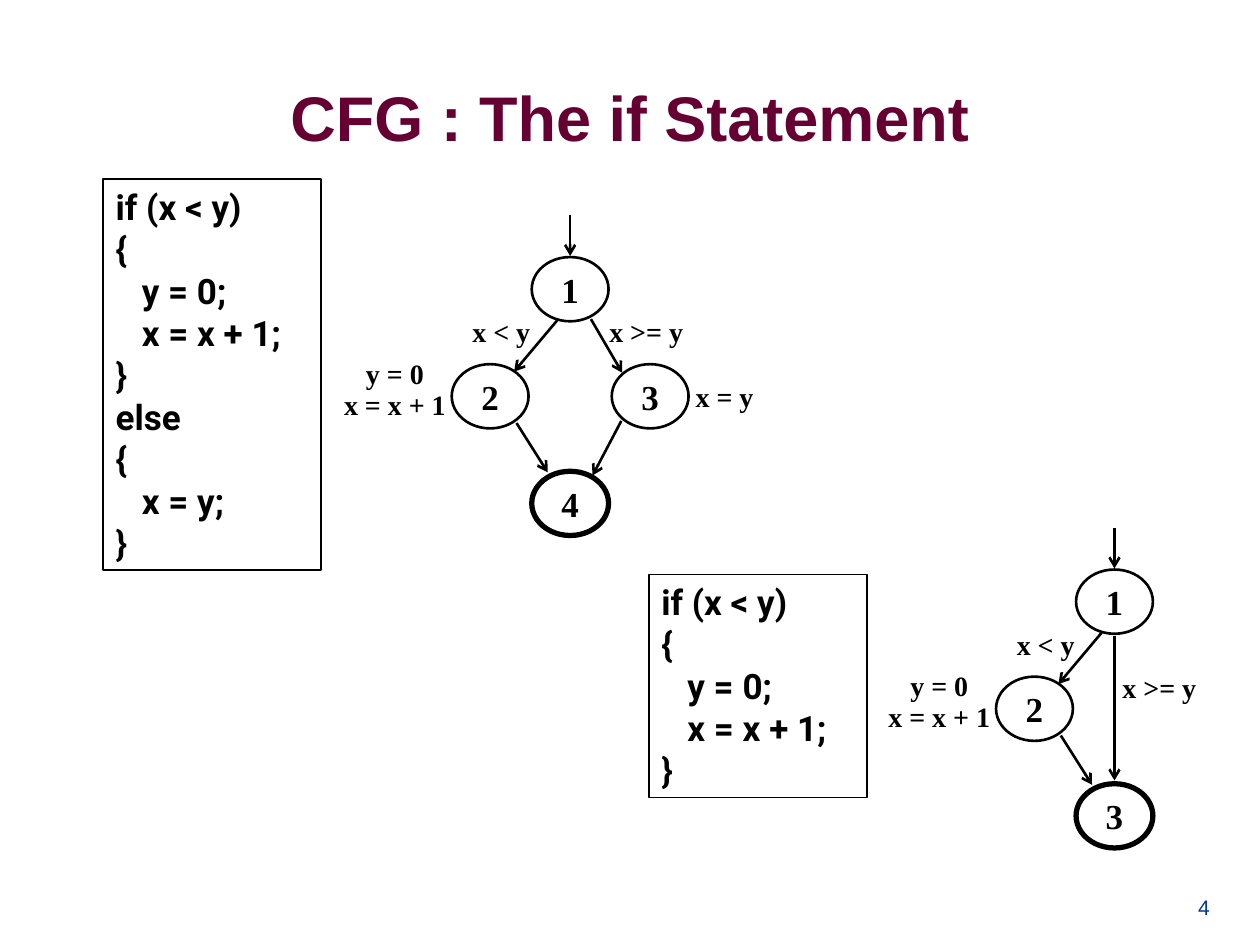
from pptx import Presentation
from pptx.dml.color import RGBColor
from pptx.enum.shapes import MSO_CONNECTOR, MSO_SHAPE
from pptx.enum.text import MSO_ANCHOR, PP_ALIGN
from pptx.oxml.ns import qn
from pptx.util import Inches, Pt
from lxml.etree import SubElement

BLACK = RGBColor(0x00, 0x00, 0x00)
PLUM = RGBColor(0x66, 0x00, 0x33)
NAVY = RGBColor(0x00, 0x33, 0x99)
SERIF, SANS, CODE = "Times New Roman", "Arial", "Roboto"

WIDE, HIGH = 10, 7.5
COL, ROW = 0.635, 0.85
NODE = (0.61, 0.51)
LABEL = (0.82, 0.37)
BLOCK = (1.03, 0.5)
CODE_W, LINE_H, PAD = 1.73, 0.334, 0.1

THEN = ["if (x < y)", "{", "   y = 0;", "   x = x + 1;", "}"]
ELSE = ["else", "{", "   x = y;", "}"]
CODES = [((0.82, 1.42), THEN + ELSE), ((5.15, 4.56), THEN)]

NODES = [("1", 0, 0), ("2", -1, 1)]
EDGES = [
    ((0, -0.69), (0, -0.31)),
    ((-0.16, 0.29), (-0.7, 0.77)),
    ((-0.67, 1.25), (-0.28, 1.71)),
]
LABELS = [(["x < y"], -0.86, 0.4), (["y = 0", "x = x + 1"], -2.19, 1)]

GRAPHS = [
    {
        "top": (4.525, 2.295),
        "nodes": NODES + [("3", 1, 1)],
        "last": ("4", 0, 2),
        "edges": EDGES + [
            ((0.26, 0.28), (0.65, 0.78)),
            ((0.64, 1.23), (0.28, 1.74)),
        ],
        "labels": LABELS + [(["x >= y"], 0.95, 0.4), (["x = y"], 1.93, 1)],
    },
    {
        "top": (8.845, 4.775),
        "nodes": NODES,
        "last": ("3", 0, 2),
        "edges": EDGES + [((0, 0.32), (0, 1.67))],
        "labels": LABELS + [(["x >= y"], 0.56, 0.8)],
    },
]


def write(shape, lines, font=SERIF, size=16, color=BLACK, bold=True,
          align=PP_ALIGN.CENTER, anchor=MSO_ANCHOR.TOP, space=None, gap=0):
    frame = shape.text_frame
    frame.word_wrap = True
    frame.vertical_anchor = anchor
    for i, line in enumerate(lines):
        para = frame.add_paragraph() if i else frame.paragraphs[0]
        para.alignment = align
        para.line_spacing = space
        if i:
            para.space_before = Pt(gap)
        run = para.add_run()
        run.text = line
        run.font.name, run.font.size = font, Pt(size)
        run.font.bold, run.font.color.rgb = bold, color


def box(shapes, x, y, w, h):
    return shapes.add_textbox(Inches(x), Inches(y), Inches(w), Inches(h))


def outline(shapes, kind, x, y, w, h, width):
    shape = shapes.add_shape(kind, Inches(x), Inches(y), Inches(w), Inches(h))
    shape.shadow.inherit = False
    shape.fill.background()
    shape.line.color.rgb = BLACK
    shape.line.width = Pt(width)
    return shape


def arrow(shapes, start, end):
    ends = [Inches(v) for v in start + end]
    edge = shapes.add_connector(MSO_CONNECTOR.STRAIGHT, *ends)
    edge.line.color.rgb = BLACK
    edge.line.width = Pt(1.5)
    SubElement(edge.line._get_or_add_ln(), qn("a:tailEnd"), type="arrow")
    SubElement(edge._element.spPr, qn("a:effectLst"))


def draw(slide, graph):
    shapes = slide.shapes.add_group_shape().shapes
    left, top = graph["top"]

    def spot(col, row):
        return left + col * COL, top + row * ROW

    def frame(col, row, size):
        x, y = spot(col, row)
        w, h = size
        return x - w / 2, y - h / 2, w, h

    for name, col, row in graph["nodes"] + [graph["last"]]:
        width = 3 if (name, col, row) == graph["last"] else 1.5
        node = outline(shapes, MSO_SHAPE.OVAL, *frame(col, row, NODE), width)
        text = node.text_frame
        text.margin_left = text.margin_right = 0
        text.margin_top = text.margin_bottom = 0
        write(node, [name], size=20, anchor=MSO_ANCHOR.MIDDLE)
    for start, end in graph["edges"]:
        arrow(shapes, spot(*start), spot(*end))
    for lines, col, row in graph["labels"]:
        many = len(lines) > 1
        label = box(shapes, *frame(col, row, BLOCK if many else LABEL))
        write(label, lines, space=0.5 if many else None, gap=8)


def main():
    deck = Presentation()
    deck.slide_width, deck.slide_height = Inches(WIDE), Inches(HIGH)
    slide = deck.slides.add_slide(deck.slide_layouts[6])

    title = box(slide.shapes, WIDE * 0.05, HIGH * 0.04, WIDE * 0.9, 1.25)
    write(title, ["CFG : The if Statement"], font=SANS, size=36, color=PLUM,
          anchor=MSO_ANCHOR.MIDDLE)
    page = box(slide.shapes, 9.01, 6.83, 0.69, 0.52)
    write(page, ["4"], font=SANS, size=12, color=NAVY, bold=False,
          align=PP_ALIGN.RIGHT, anchor=MSO_ANCHOR.BOTTOM)

    for (x, y), lines in CODES:
        tall = len(lines) * LINE_H + PAD
        code = outline(slide.shapes, MSO_SHAPE.RECTANGLE, x, y, CODE_W, tall, 1)
        write(code, lines, font=CODE, size=20, align=PP_ALIGN.LEFT)
    for graph in GRAPHS:
        draw(slide, graph)
    deck.save("out.pptx")


if __name__ == "__main__":
    main()
